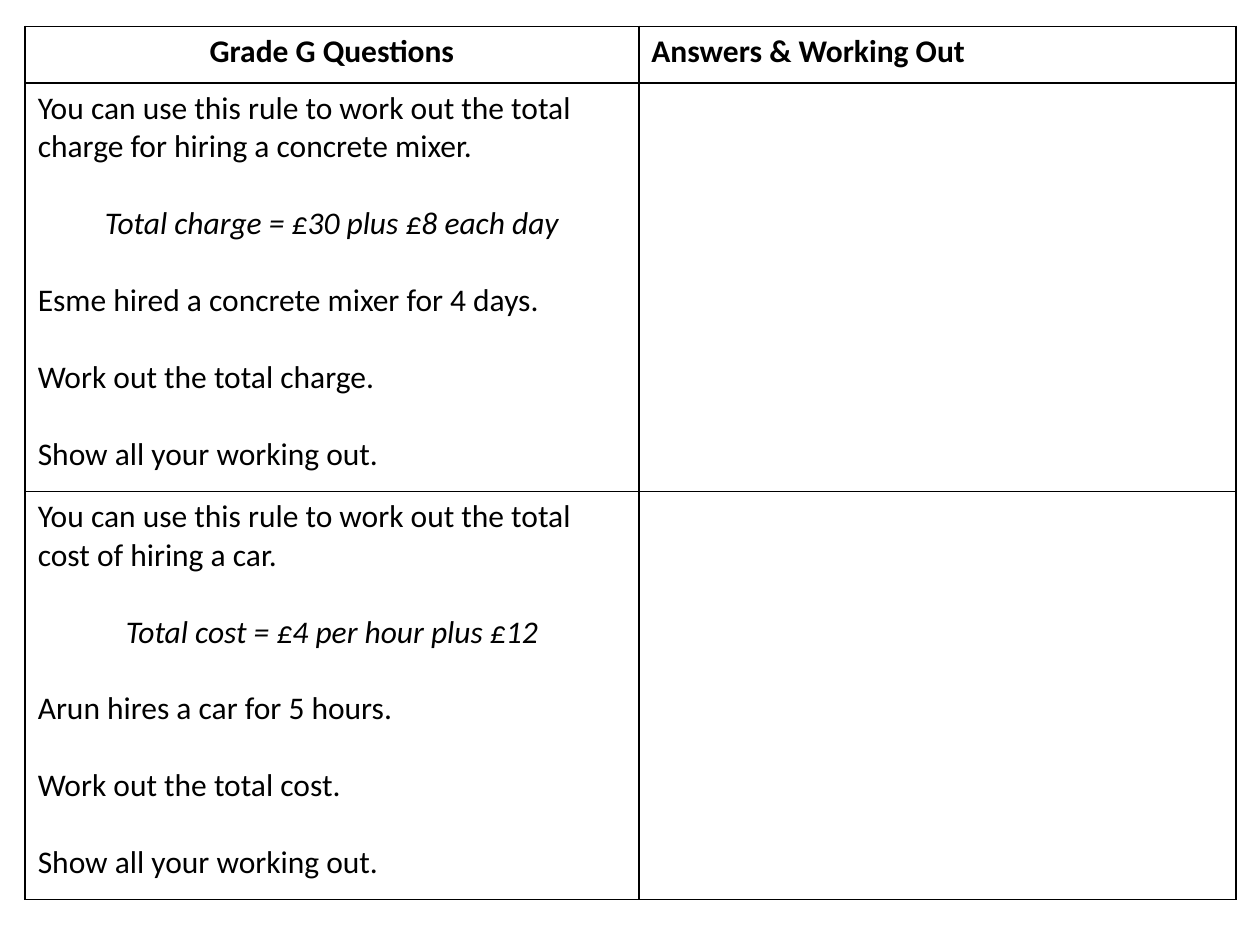
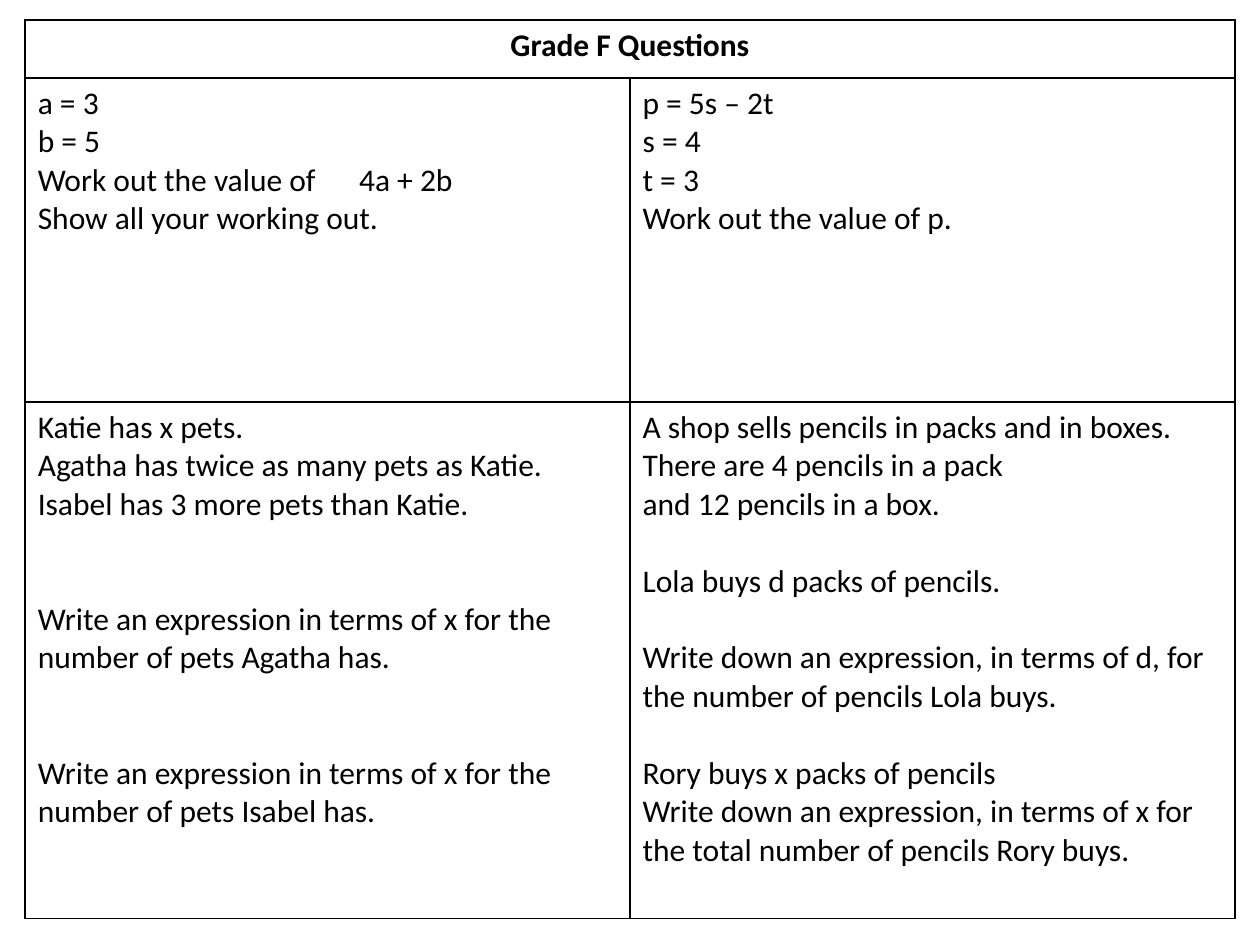
from collections import namedtuple

from lxml import etree
from pptx import Presentation
from pptx.dml.color import RGBColor
from pptx.enum import text
from pptx.oxml import ns
from pptx.util import Inches, Pt

COLORS = {"ink": "000000", "paper": "FFFFFF"}
FONT = "Calibri"
TEXT_SIZE = 18
LINE_PITCH = 22
BORDER = 1
TAB_STOP = 2.55
TABLE_LEFT = 0.2

Line = namedtuple("Line", "text gap bold italic centred",
                  defaults=(0, False, False, False))


def heading(words, centred=True):
    return [Line(words, bold=True, centred=centred)]


def lines(*words):
    return [Line(w) for w in words]


def rule_question(intro, rule, story, task):
    return [Line(intro), Line(rule, gap=1, italic=True, centred=True),
            *(Line(w, gap=1) for w in (story, task, "Show all your working out."))]


def add_tab_stop(p):
    tabs = etree.SubElement(p._p.get_or_add_pPr(), ns.qn("a:tabLst"))
    etree.SubElement(tabs, ns.qn("a:tab"), pos=str(Inches(TAB_STOP)), algn="l")


def write_line(p, line):
    p.alignment = text.PP_ALIGN.CENTER if line.centred else text.PP_ALIGN.LEFT
    p.space_before = Pt(line.gap * LINE_PITCH)
    if "\t" in line.text:
        add_tab_stop(p)
    r = p.add_run()
    r.text = line.text
    r.font.name = FONT
    r.font.size = Pt(TEXT_SIZE)
    r.font.bold = line.bold
    r.font.italic = line.italic
    r.font.color.rgb = RGBColor.from_string(COLORS["ink"])


def add_borders(cell):
    tcPr = cell._tc.get_or_add_tcPr()
    for i, side in enumerate(("lnL", "lnR", "lnT", "lnB")):
        ln = etree.Element(ns.qn(f"a:{side}"), w=str(Pt(BORDER)))
        fill = etree.SubElement(ln, ns.qn("a:solidFill"))
        etree.SubElement(fill, ns.qn("a:srgbClr"), val=COLORS["ink"])
        tcPr.insert(i, ln)


def fill_cell(cell, content):
    cell.fill.solid()
    cell.fill.fore_color.rgb = RGBColor.from_string(COLORS["paper"])
    add_borders(cell)
    tf = cell.text_frame
    for i, line in enumerate(content):
        write_line(tf.paragraphs[0] if i == 0 else tf.add_paragraph(), line)


def question_slide(prs, top, widths, heights, content):
    s = prs.slides.add_slide(prs.slide_layouts[6])
    frame = s.shapes.add_table(
        len(heights), len(widths), Inches(TABLE_LEFT), Inches(top),
        Inches(sum(widths)), Inches(sum(heights)))
    table = frame.table
    table.first_row = table.horz_banding = False
    for column, width in zip(table.columns, widths):
        column.width = Inches(width)
    for row, height in zip(table.rows, heights):
        row.height = Inches(height)
    for r, row_content in enumerate(content):
        for c in range(len(widths)):
            fill_cell(table.cell(r, c), row_content[c] if c < len(row_content) else [])
    return table


def grade_g(prs):
    mixer = rule_question(
        "You can use this rule to work out the total charge for hiring a concrete mixer.",
        "Total charge = £30 plus £8 each day",
        "Esme hired a concrete mixer for 4 days.",
        "Work out the total charge.")
    car = rule_question(
        "You can use this rule to work out the total cost of hiring a car.",
        "Total cost = £4 per hour plus £12",
        "Arun hires a car for 5 hours.",
        "Work out the total cost.")
    titles = [heading("Grade G Questions"),
              heading("Answers & Working Out", centred=False)]
    question_slide(prs, 0.21, [4.87, 4.74], [0.45, 3.24, 3.24],
                   [titles, [mixer], [car]])


def grade_f(prs):
    substitute_ab = lines("a = 3", "b = 5", "Work out the value of\t4a + 2b",
                          "Show all your working out.")
    substitute_st = lines("p = 5s – 2t", "s = 4", "t = 3", "Work out the value of p.")
    pets = lines("Katie has x pets.", "Agatha has twice as many pets as Katie.",
                 "Isabel has 3 more pets than Katie.")
    pets += [Line(f"Write an expression in terms of x for the number of pets {name} has.",
                  gap=2) for name in ("Agatha", "Isabel")]
    pencils = lines("A shop sells pencils in packs and in boxes.",
                    "There are 4 pencils in a pack", "and 12 pencils in a box.")
    pencils += [
        Line("Lola buys d packs of pencils.", gap=1),
        Line("Write down an expression, in terms of d, for the number of pencils Lola buys.",
             gap=1),
        Line("Rory buys x packs of pencils", gap=1),
        Line("Write down an expression, in terms of x for the total number of pencils Rory buys."),
    ]
    table = question_slide(
        prs, 0.16, [4.8, 4.8], [0.46, 2.57, 4.1],
        [[heading("Grade F Questions")], [substitute_ab, substitute_st], [pets, pencils]])
    table.cell(0, 0).merge(table.cell(0, 1))


def main():
    prs = Presentation()
    prs.slide_width, prs.slide_height = Inches(10), Inches(7.5)
    grade_g(prs)
    grade_f(prs)
    prs.save("out.pptx")


if __name__ == "__main__":
    main()
